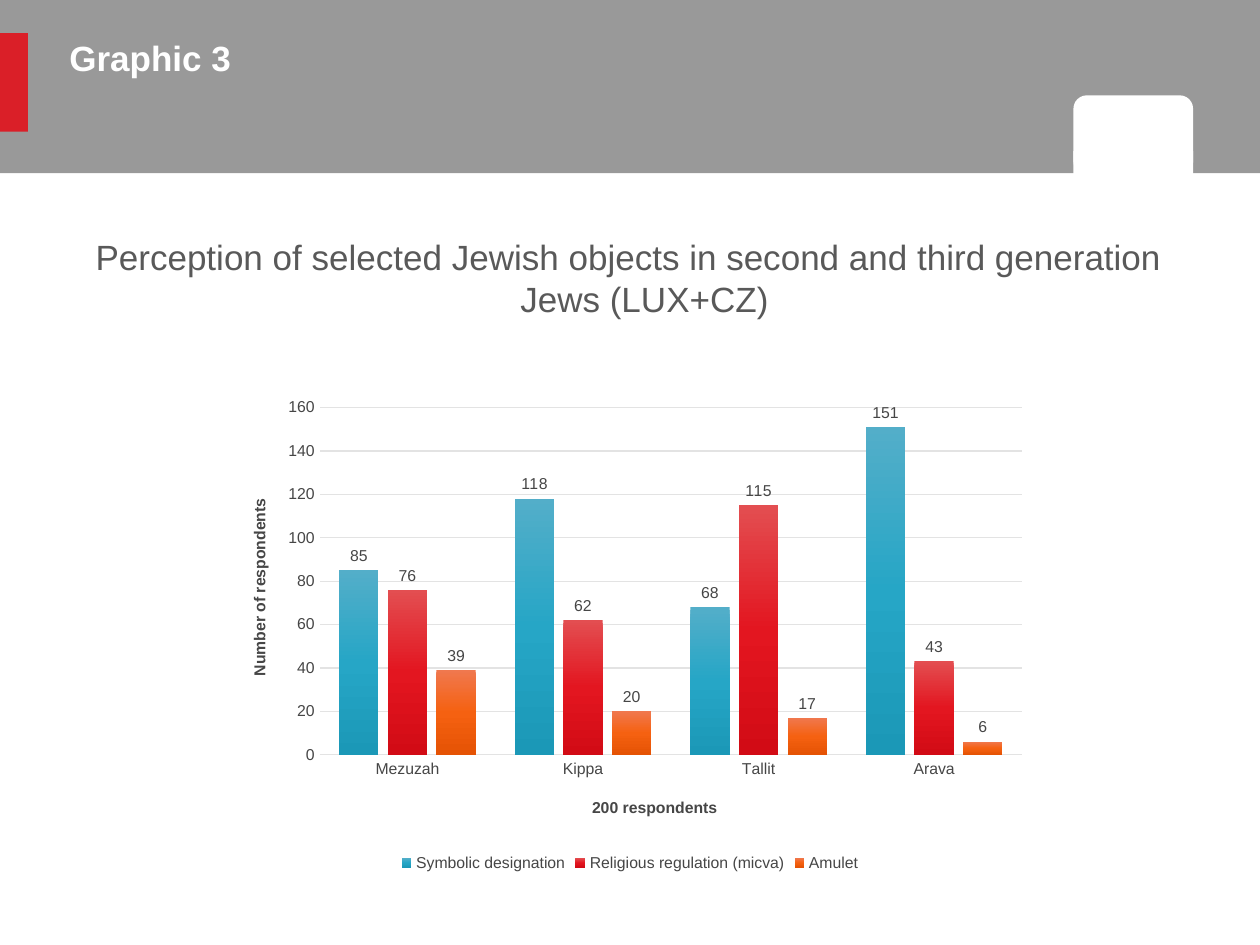
from dataclasses import dataclass

import lxml.etree
import pptx
import pptx.chart.data
import pptx.dml.color
import pptx.enum.chart
import pptx.enum.shapes
import pptx.enum.text
import pptx.oxml.ns
import pptx.util

Pt = pptx.util.Pt
qn = pptx.oxml.ns.qn
Geometry = pptx.enum.shapes.MSO_SHAPE
FONT = "Arial"
COLORS = {
    "banner": "808080",
    "accent": "DA1F28",
    "white": "FFFFFF",
    "body": "595959",
    "chart_text": "464646",
    "grid": "E3E3E3",
}


@dataclass
class Box:
    left: float
    top: float
    width: float
    height: float

    def lengths(self) -> list:
        return [Pt(v) for v in (self.left, self.top, self.width, self.height)]


@dataclass
class Decoration:
    box: Box
    color: str
    geometry: int = Geometry.RECTANGLE
    opacity: int = 100


@dataclass
class Series:
    name: str
    values: tuple
    gradient: tuple


DECORATIONS = [
    Decoration(Box(0, 0, 720, 99), "banner", opacity=80),
    Decoration(Box(0, 18.9, 16, 56.3), "accent"),
    Decoration(Box(613.4, 54.5, 68.4, 45.4), "white", Geometry.ROUNDED_RECTANGLE),
    Decoration(Box(613.4, 86.4, 68.4, 13.5), "white"),
]
CATEGORIES = ["Mezuzah", "Kippa", "Tallit", "Arava"]
SERIES = [
    Series("Symbolic designation", (85, 118, 68, 151), ("53AEC9", "26A6C6", "1B98B7")),
    Series("Religious regulation (micva)", (76, 62, 115, 43), ("E34E51", "E31620", "D20B15")),
    Series("Amulet", (39, 20, 17, 6), ("F0784E", "F56111", "E55304")),
]


def rgb(name: str) -> pptx.dml.color.RGBColor:
    return pptx.dml.color.RGBColor.from_string(COLORS[name])


def style_font(font, size: float, color: str, bold: bool = False) -> None:
    font.name, font.size, font.bold = FONT, Pt(size), bold
    font.color.rgb = rgb(color)


def add_decoration(page, item: Decoration) -> None:
    shape = page.shapes.add_shape(item.geometry, *item.box.lengths())
    shape.shadow.inherit = False
    shape.fill.solid()
    shape.fill.fore_color.rgb = rgb(item.color)
    shape.line.fill.background()
    if item.opacity < 100:
        color = shape.fill._xPr.find(qn("a:solidFill"))[0]
        lxml.etree.SubElement(color, qn("a:alpha"), val=str(item.opacity * 1000))


def fill_placeholder(page, box, place: Box, text: str, color: str, bold: bool = False):
    """Bring the placeholder to the front, set its text and return the paragraph."""
    page.shapes._spTree.append(box._element)
    box.left, box.top, box.width, box.height = place.lengths()
    frame = box.text_frame
    frame.margin_left = frame.margin_top = frame.margin_right = frame.margin_bottom = 0
    frame.word_wrap = True
    frame.auto_size = pptx.enum.text.MSO_AUTO_SIZE.NONE
    frame.vertical_anchor = pptx.enum.text.MSO_ANCHOR.TOP
    para = frame.paragraphs[0]
    para.space_before = Pt(0)
    span = para.add_run()
    span.text = text
    style_font(span.font, 20, color, bold)
    return para


def place_manually(element, inner: bool = False, **fractions: float) -> None:
    """Give a chart part a fixed place, in fractions of the chart's size."""
    layout = element.find(qn("c:layout"))
    if layout is None:
        layout = lxml.etree.Element(qn("c:layout"))
        element.insert(0 if inner else 1, layout)
    manual = lxml.etree.SubElement(layout, qn("c:manualLayout"))
    if inner:
        lxml.etree.SubElement(manual, qn("c:layoutTarget"), val="inner")
    for mode in ("xMode", "yMode"):
        lxml.etree.SubElement(manual, qn(f"c:{mode}"), val="edge")
    for key, value in fractions.items():
        lxml.etree.SubElement(manual, qn(f"c:{key}"), val=str(value))


def set_gradient(series, colors: tuple) -> None:
    """Fill the columns from top to bottom with evenly spaced colours."""
    fill = series.format.fill
    fill.gradient()
    gradient = fill._xPr.find(qn("a:gradFill"))
    stops = gradient.find(qn("a:gsLst"))
    for stop in list(stops):
        stops.remove(stop)
    for index, color in enumerate(colors):
        position = index * 100000 // (len(colors) - 1)
        stop = lxml.etree.SubElement(stops, qn("a:gs"), pos=str(position))
        lxml.etree.SubElement(stop, qn("a:srgbClr"), val=color)
    gradient.find(qn("a:lin")).set("ang", str(90 * 60000))


def style_axis(axis, title: str, x: float, y: float) -> None:
    marks = pptx.enum.chart.XL_TICK_MARK
    axis.major_tick_mark = axis.minor_tick_mark = marks.NONE
    style_font(axis.tick_labels.font, 9, "chart_text")
    span = axis.axis_title.text_frame.paragraphs[0].add_run()
    span.text = title
    style_font(span.font, 9, "chart_text", bold=True)
    place_manually(axis.axis_title._element, x=x, y=y)


def add_column_chart(page, place: Box) -> None:
    data = pptx.chart.data.CategoryChartData()
    data.categories = CATEGORIES
    for item in SERIES:
        data.add_series(item.name, item.values)
    kind = pptx.enum.chart.XL_CHART_TYPE.COLUMN_CLUSTERED
    chart = page.shapes.add_chart(kind, *place.lengths(), data).chart
    chart.has_title = False
    style_font(chart.font, 9, "chart_text")
    chart.has_legend = True
    chart.legend.position = pptx.enum.chart.XL_LEGEND_POSITION.BOTTOM
    chart.legend.include_in_layout = False
    style_font(chart.legend.font, 9, "chart_text")

    style_axis(chart.category_axis, "200 respondents", 0.45, 0.83)
    style_axis(chart.value_axis, "Number of respondents", 0.03, 0.22)
    chart.value_axis.minimum_scale = 0
    chart.value_axis.maximum_scale = 160
    chart.value_axis.major_unit = 20
    chart.value_axis.format.line.fill.background()
    for line in (chart.category_axis.format.line,
                 chart.value_axis.major_gridlines.format.line):
        line.color.rgb = rgb("grid")
        line.width = Pt(0.75)

    plot = chart.plots[0]
    plot.gap_width, plot.overlap = 100, -24
    plot.vary_by_categories = False
    for series, item in zip(plot.series, SERIES):
        set_gradient(series, item.gradient)
        labels = series.data_labels
        labels.show_value = True
        labels.position = pptx.enum.chart.XL_LABEL_POSITION.OUTSIDE_END
        style_font(labels.font, 9, "chart_text")
    plot_area = chart._chartSpace.chart.plotArea
    place_manually(plot_area, inner=True, x=0.12, y=0.04, w=0.86, h=0.71)


def main() -> None:
    deck = pptx.Presentation()
    deck.slide_width, deck.slide_height = Pt(720), Pt(540)
    page = deck.slides.add_slide(deck.slide_layouts[1])
    for item in DECORATIONS:
        add_decoration(page, item)

    body = fill_placeholder(
        page, page.placeholders[1], Box(38.9, 134.6, 640.8, 383),
        "Perception of selected Jewish objects in second and third generation Jews (LUX+CZ)",
        "body")
    body.alignment = pptx.enum.text.PP_ALIGN.CENTER
    body.line_spacing = Pt(24)
    properties = body._p.get_or_add_pPr()
    properties.set("marL", str(Pt(18)))
    properties.set("indent", str(-Pt(18)))
    lxml.etree.SubElement(properties, qn("a:buNone"))

    title = fill_placeholder(page, page.shapes.title, Box(39.6, 20.9, 541.4, 77.8),
                             "Graphic 3", "white", bold=True)
    title.alignment = pptx.enum.text.PP_ALIGN.LEFT
    add_column_chart(page, Box(126.7, 221.8, 466.6, 279.4))
    deck.save("out.pptx")


if __name__ == "__main__":
    main()
